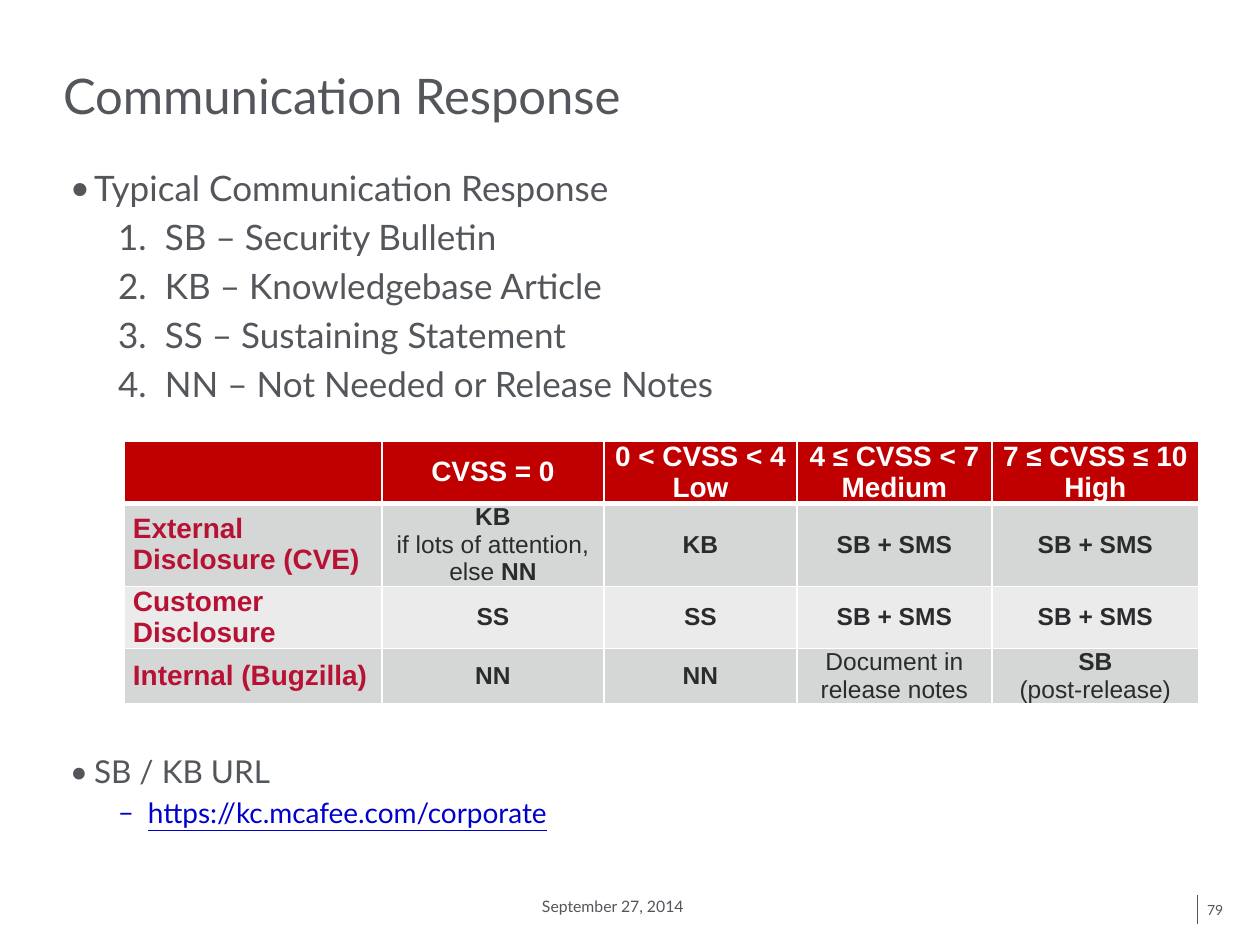
from lxml import etree
from pptx import Presentation
from pptx.dml.color import RGBColor
from pptx.enum.shapes import MSO_CONNECTOR
from pptx.enum.text import MSO_ANCHOR as Anchor, MSO_AUTO_SIZE as AutoSize, PP_ALIGN as Align
from pptx.oxml.ns import qn
from pptx.util import Emu, Pt

GRAY = RGBColor(0x53, 0x56, 0x5A)
INK = RGBColor(0x2A, 0x2B, 0x2D)
WHITE = RGBColor(0xFF, 0xFF, 0xFF)
RED = RGBColor(0xC0, 0x00, 0x00)
CRIMSON = RGBColor(0xB7, 0x12, 0x34)
LINK_BLUE = RGBColor(0x00, 0x00, 0xCC)
BAND_DARK = RGBColor(0xD5, 0xD6, 0xD6)
BAND_LIGHT = RGBColor(0xEB, 0xEB, 0xEC)


def px(length):
    return Emu(round(length * 914400 / 126))


class SlideBuilder:
    font = "Lato"
    table_font = "Arial"

    def __init__(self, deck):
        self.slide = deck.slides.add_slide(deck.slide_layouts[1])

    def place(self, shape, left, top, width, height):
        shape.left, shape.top = px(left), px(top)
        shape.width, shape.height = px(width), px(height)

    def frame(self, shape, anchor, insets):
        frame = shape.text_frame
        frame.auto_size = AutoSize.NONE
        frame.word_wrap = True
        frame.vertical_anchor = anchor
        frame.margin_left, frame.margin_top, frame.margin_right, frame.margin_bottom = map(px, insets)
        return frame

    def run(self, para, text, size, color=GRAY, bold=False, font=None):
        span = para.add_run()
        span.text = text
        span.font.name = font or self.font
        span.font.size = Pt(size)
        span.font.bold = bold
        span.font.color.rgb = color
        return span

    def title(self, text, box):
        shape = self.slide.shapes.title
        self.place(shape, *box)
        para = self.frame(shape, Anchor.BOTTOM, (0, 0, 0, 0)).paragraphs[0]
        para.alignment = Align.LEFT
        para.line_spacing = 0.9
        self.run(para, text, 28)

    def bullets(self, items, box):
        """Each item: text, size, level, marker, left px, hanging px, space before, color."""
        shape = self.slide.placeholders[1]
        self.place(shape, *box)
        frame = self.frame(shape, Anchor.TOP, (0, 0, 0, 6))
        for index, (text, size, level, marker, left, hanging, before, color) in enumerate(items):
            para = frame.add_paragraph() if index else frame.paragraphs[0]
            para.level = level
            properties = para._p.get_or_add_pPr()
            properties.set("marL", str(px(left)))
            properties.set("indent", str(-px(hanging)))
            if marker == "1.":
                etree.SubElement(properties, qn("a:buFont")).set("typeface", "+mj-lt")
                etree.SubElement(properties, qn("a:buAutoNum")).set("type", "arabicPeriod")
            else:
                etree.SubElement(properties, qn("a:buFont")).set("typeface", self.font)
                etree.SubElement(properties, qn("a:buChar")).set("char", marker)
            para.space_before = Pt(before)
            span = self.run(para, text, size, color)
            span.font.underline = color == LINK_BLUE

    def label(self, text, size, box, anchor=Anchor.TOP, insets=(0, 0, 0, 0)):
        shape = self.slide.shapes.add_textbox(*map(px, box))
        self.run(self.frame(shape, anchor, insets).paragraphs[0], text, size)

    def line(self, start, end, color, width):
        rule = self.slide.shapes.add_connector(MSO_CONNECTOR.STRAIGHT, *map(px, start + end))
        rule.line.color.rgb = color
        rule.line.width = Pt(width)
        etree.SubElement(rule._element.spPr, qn("a:effectLst"))

    def borders(self, cell, widths):
        properties = cell._tc.get_or_add_tcPr()
        for side, width in zip(("L", "R", "T", "B"), widths):
            edge = etree.SubElement(properties, qn(f"a:ln{side}"), w=str(Pt(width)))
            fill = etree.SubElement(edge, qn("a:solidFill"))
            etree.SubElement(fill, qn("a:srgbClr")).set("val", str(WHITE))

    def cell(self, cell, lines, row, column):
        cell.vertical_anchor = Anchor.MIDDLE
        cell.margin_left = cell.margin_right = px(9)
        cell.margin_top = cell.margin_bottom = 0
        self.borders(cell, (1, 1, 3 if row == 1 else 1, 3 if row == 0 else 1))
        cell.fill.solid()
        if row == 0:
            cell.fill.fore_color.rgb, size, color = RED, 16, WHITE
        else:
            cell.fill.fore_color.rgb = BAND_DARK if row % 2 else BAND_LIGHT
            size, color = (14, INK) if column else (16, CRIMSON)
        for index, spans in enumerate(lines):
            para = cell.text_frame.add_paragraph() if index else cell.text_frame.paragraphs[0]
            para.alignment = Align.CENTER if column else Align.LEFT
            for text, bold in spans:
                self.run(para, text, size, color, bold, self.table_font)

    def table(self, rows, left, top, widths, heights):
        box = (left, top, sum(widths), sum(heights))
        table = self.slide.shapes.add_table(len(rows), len(widths), *map(px, box)).table
        for column, width in zip(table.columns, widths):
            column.width = px(width)
        for row, height in zip(table.rows, heights):
            row.height = px(height)
        for r, row in enumerate(rows):
            for c, lines in enumerate(row):
                self.cell(table.cell(r, c), lines, r, c)


def strong(*lines):
    return [[(line, True)] for line in lines]


def plain(text):
    return [(text, False)]


def main():
    deck = Presentation()
    deck.slide_width, deck.slide_height = px(1260), px(945)
    page = SlideBuilder(deck)

    # Page number rule, title and list
    page.line((1197, 895), (1197, 924), GRAY, 0.5)
    page.title("Communication Response", (63, 25, 1134, 100))
    responses = ("SB – Security Bulletin", "KB – Knowledgebase Article",
                 "SS – Sustaining Statement", "NN – Not Needed or Release Notes")
    page.bullets(
        [("Typical Communication Response", 20, 0, "•", 24, 24, 0, GRAY)]
        + [(text, 20, 1, "1.", 95, 47, 4, GRAY) for text in responses]
        + [("SB / KB URL", 18, 0, "•", 24, 24, 199, GRAY),
           ("https://kc.mcafee.com/corporate", 16, 1, "–", 78, 30, 3, LINK_BLUE)],
        (70, 166, 1145, 650))

    # Response by disclosure source and severity
    both = strong("SB + SMS")
    rows = [
        [[], strong("CVSS = 0"), strong("0 < CVSS < 4", "Low"),
         strong("4 ≤ CVSS < 7", "Medium"), strong("7 ≤ CVSS ≤ 10", "High")],
        [strong("External Disclosure (CVE)"),
         strong("KB") + [plain("if lots of attention, else ") + [("NN", True)]],
         strong("KB"), both, both],
        [strong("Customer Disclosure"), strong("SS"), strong("SS"), both, both],
        [strong("Internal (Bugzilla)"), strong("NN"), strong("NN"),
         [plain("Document in release notes")], strong("SB") + [plain("(post-release)")]],
    ]
    page.table(rows, 124, 441, (258, 222, 193, 195, 207), (61, 83, 62, 55))

    # Footer
    page.label("79", 8, (1207, 895, 32, 29), Anchor.MIDDLE)
    page.label("September 27, 2014", 9, (529, 891, 223, 30), insets=(13, 6, 13, 6))
    deck.save("out.pptx")


if __name__ == "__main__":
    main()
